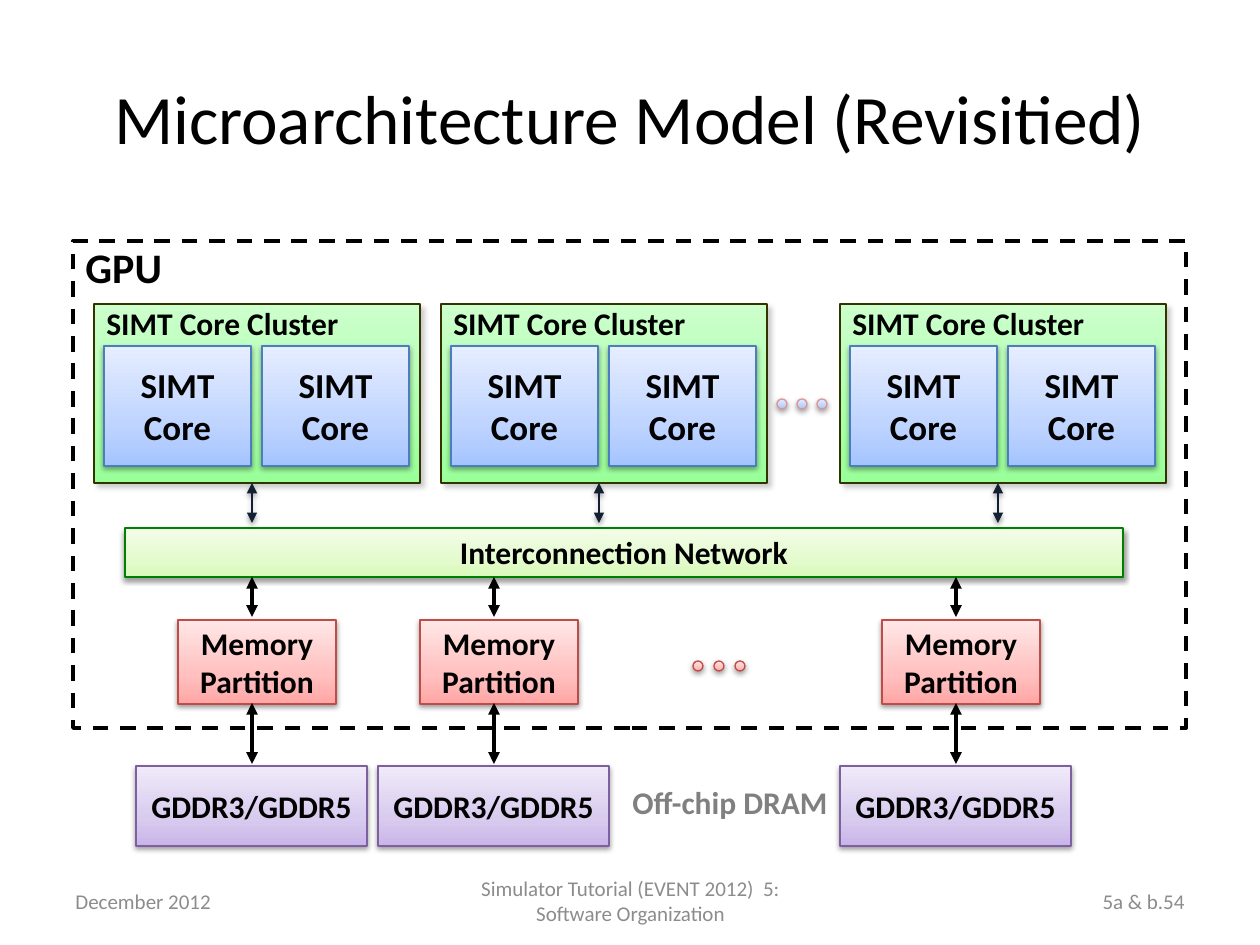
import copy

import pptx
import pptx.dml.color
import pptx.enum.dml
import pptx.enum.shapes
import pptx.enum.text
import pptx.oxml
import pptx.oxml.ns
import pptx.util

SHAPE = pptx.enum.shapes.MSO_SHAPE
ALIGN = pptx.enum.text.PP_ALIGN
ANCHOR = pptx.enum.text.MSO_ANCHOR
NS = pptx.oxml.ns.nsdecls("a")

GREEN = [(0, "99FF99"), (1, "CCFFCC")]
BLUE = [(0, "A4C4FF"), (0.35, "BFD4FF"), (1, "E6EEFF")]
RED = [(0, "FFA6A5"), (0.35, "FFC0BF"), (1, "FFE7E7")]
PURPLE = [(0, "C9B5E8"), (0.35, "D8CBEE"), (1, "F0EAF9")]
LIME = [(0, "DAFABB"), (0.5, "E7FBD4"), (1, "F3FDE9")]
SOFT = dict(alpha=38, blur=40000, dist=20000, angle=90)
OFFSET = dict(alpha=20, blur=38100, dist=38100, angle=45)


def px(n):
    """Turn pixels into EMU."""
    return pptx.util.Emu(round(n * 914400 / 126))


def rgb(value):
    """Turn a hex string into a colour."""
    return pptx.dml.color.RGBColor.from_string(value)


def gradient(fill, stops):
    """Fill upwards with the given (position, colour) stops."""
    fill.gradient()
    fill.gradient_angle = 90
    last = fill.gradient_stops[1]._gs
    for _ in stops[2:]:
        last.addnext(copy.deepcopy(last))
    for stop, (position, value) in zip(fill.gradient_stops, stops):
        stop.position = position
        stop.color.rgb = rgb(value)


def effects(sp, shadow):
    """Give a shape or connector the shadow, or none at all."""
    inner = ""
    if shadow:
        inner = (
            f'<a:outerShdw blurRad="{shadow["blur"]}" dist="{shadow["dist"]}" '
            f'dir="{shadow["angle"] * 60000}" rotWithShape="0"><a:srgbClr val="000000">'
            f'<a:alpha val="{shadow["alpha"] * 1000}"/></a:srgbClr></a:outerShdw>'
        )
    sp._element.spPr.append(pptx.oxml.parse_xml(f"<a:effectLst {NS}>{inner}</a:effectLst>"))


def write(sp, text, size, color="000000", bold=True, align=ALIGN.CENTER,
          anchor=ANCHOR.MIDDLE, wrap=False, top=6):
    """Put one paragraph per line of text into a shape."""
    tf = sp.text_frame
    tf.word_wrap = wrap
    tf.vertical_anchor = anchor
    tf.margin_top = px(top)
    for i, line in enumerate(text.split("\n")):
        p = tf.paragraphs[0] if i == 0 else tf.add_paragraph()
        p.alignment = align
        r = p.add_run()
        r.text = line
        r.font.name = "Calibri"
        r.font.size = pptx.util.Pt(size)
        r.font.bold = bold
        r.font.color.rgb = rgb(color)


def label(s, box, text, size, **style):
    """Add a text box."""
    write(s.shapes.add_textbox(*map(px, box)), text, size, **style)


def block(s, box, stops, line, width=0.75, shadow=SOFT, kind=SHAPE.RECTANGLE):
    """Add an outlined shape with a gradient, or hollow when there are no stops."""
    sp = s.shapes.add_shape(kind, *map(px, box))
    if stops:
        gradient(sp.fill, stops)
    else:
        sp.fill.background()
    sp.line.color.rgb = rgb(line)
    sp.line.width = pptx.util.Pt(width)
    effects(sp, shadow)
    return sp


def arrow(s, x, top, bottom, color="000000", width=2.25, shadow=None):
    """Add a vertical double-headed arrow."""
    c = s.shapes.add_connector(pptx.enum.shapes.MSO_CONNECTOR.STRAIGHT,
                               px(x), px(top), px(x), px(bottom))
    c.line.color.rgb = rgb(color)
    c.line.width = pptx.util.Pt(width)
    for end in ("headEnd", "tailEnd"):
        c.line._get_or_add_ln().append(pptx.oxml.parse_xml(f'<a:{end} {NS} type="triangle"/>'))
    effects(c, shadow)


def dots(s, x, y, step, stops, line):
    """Add three evenly spaced dots."""
    for i in range(3):
        block(s, (x + i * step, y, 10, 10), stops, line, kind=SHAPE.OVAL)


def chip(s, x, y, w, h):
    """Draw the dashed chip outline and the network inside it."""
    sp = block(s, (x, y, w, h), None, "000000", width=2.25, shadow=None)
    sp.line.dash_style = pptx.enum.dml.MSO_LINE.DASH
    write(sp, "GPU", 24, align=ALIGN.LEFT, anchor=ANCHOR.TOP, top=0)
    network = block(s, (x + 52, y + 287, w - 115, 49), LIME, "008000")
    write(network, "Interconnection Network", 18)


def cluster(s, x, y, w, h):
    """Draw a core cluster with two cores and its link to the network."""
    sp = block(s, (x, y, w, h), GREEN, "333300", width=1, shadow=OFFSET)
    write(sp, "SIMT Core Cluster", 18, align=ALIGN.LEFT, anchor=ANCHOR.TOP, top=0)
    for dx in (10, 168):
        write(block(s, (x + dx, y + 42, 147, 120), BLUE, "4B7EBC"), "SIMT\nCore", 20)
    arrow(s, x + 158, y + h, y + h + 40, color="122031", width=0.75, shadow=SOFT)


def channel(s, x, y, w, h):
    """Draw a memory partition, its DRAM and the links above each."""
    partition = block(s, (x + 42, y + 43, 158, 84), RED, "BF4C48")
    write(partition, "Memory\nPartition", 18)
    dram = block(s, (x, y + h - 80, w, 80), PURPLE, "7D60A0")
    write(dram, "GDDR3/GDDR5", 18)
    arrow(s, x + 116, y, y + 40)
    arrow(s, x + 116, y + 126, y + 187)


def footer(s, x, y, w, h):
    """Write the date, the talk and the page number along the bottom."""
    style = dict(color="8C8C8C", bold=False, wrap=True)
    label(s, (x, y, 294, h), "December 2012", 12, align=ALIGN.LEFT, **style)
    label(s, (x + 368, y, w - 735, h),
          "Simulator Tutorial (EVENT 2012)  5: Software Organization", 12, **style)
    label(s, (x + w - 294, y, 294, h), "5a & b.54", 12, align=ALIGN.RIGHT, **style)


def main():
    """Build and save the slide."""
    prs = pptx.Presentation()
    prs.slide_width, prs.slide_height = px(1260), px(945)
    s = prs.slides.add_slide(prs.slide_layouts[6])
    label(s, (63, 38, 1134, 158), "Microarchitecture Model (Revisitied)", 39.6,
          bold=False, wrap=True)
    chip(s, 73, 241, 1113, 487)
    dots(s, 777, 399, 20, BLUE, "D99694")
    dots(s, 693, 661, 21, RED, "BF4C48")
    for x in (94, 441, 840):
        cluster(s, x, 304, 326, 179)
    for x in (136, 378, 840):
        channel(s, x, 577, 231, 269)
    label(s, (620, 777, 223, 50), "Off-chip DRAM", 18, color="808080",
          align=ALIGN.LEFT, anchor=ANCHOR.TOP)
    footer(s, 63, 876, 1134, 50)
    prs.save("out.pptx")


if __name__ == "__main__":
    main()
